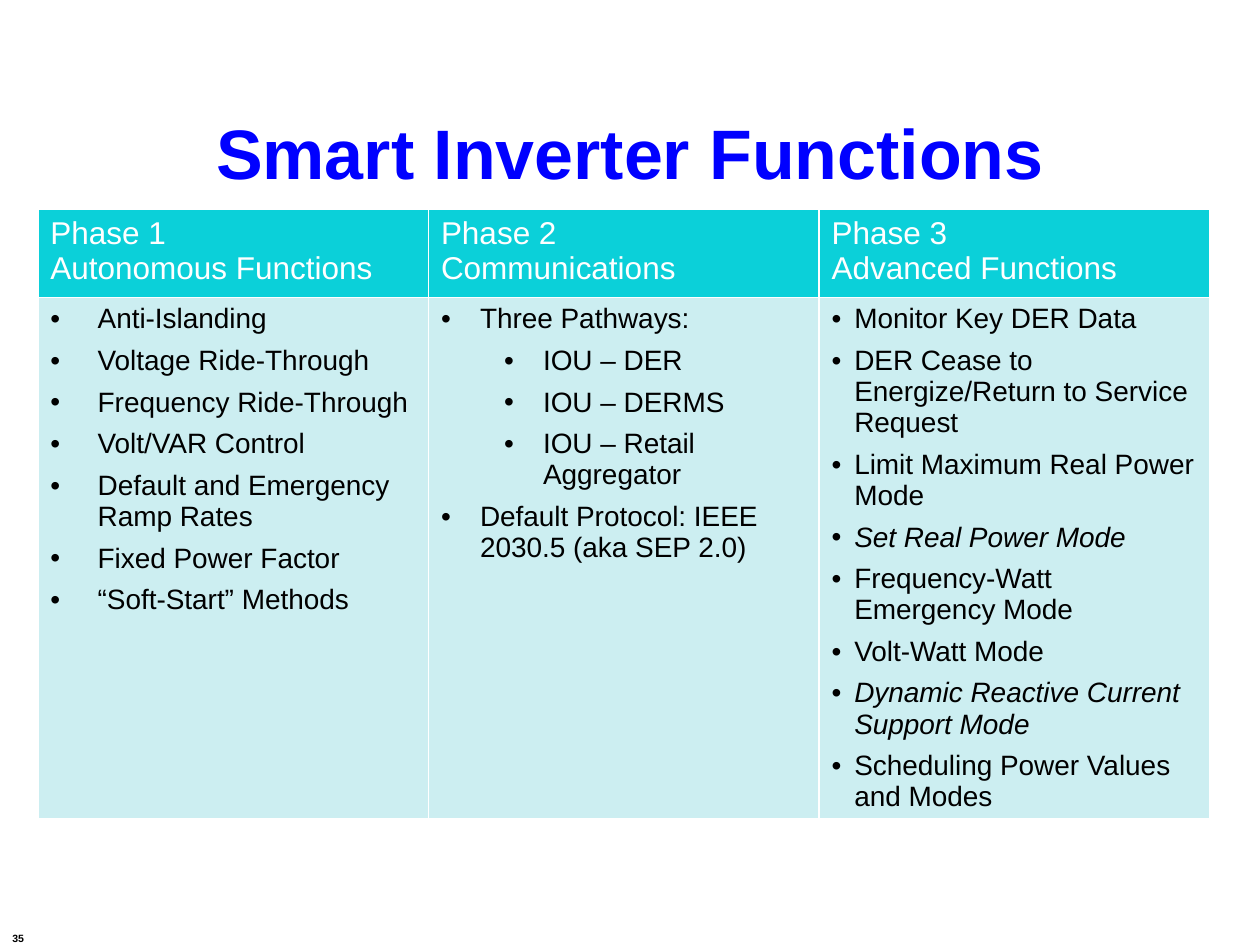
"""Build the slide that lists smart inverter functions by phase."""
from dataclasses import dataclass

from lxml.etree import SubElement
from pptx import Presentation
from pptx.dml.color import RGBColor as Color
from pptx.enum.text import MSO_ANCHOR as Anchor, PP_ALIGN as Align
from pptx.oxml.ns import qn
from pptx.util import Inches, Pt


@dataclass(frozen=True)
class Theme:
    font: str = "Arial"
    title: str = "0000FF"
    header: str = "0BD0D9"
    body: str = "CCEEF1"
    light: str = "FFFFFF"
    text: str = "000000"
    title_size: int = 40
    header_size: int = 18
    body_size: int = 16
    number_size: int = 6


@dataclass(frozen=True)
class Phase:
    name: str
    topic: str
    hanging: float
    functions: tuple


PHASES = (
    Phase("Phase 1", "Autonomous Functions", 0.375, (
        "Anti-Islanding", "Voltage Ride-Through", "Frequency Ride-Through",
        "Volt/VAR Control", "Default and Emergency Ramp Rates",
        "Fixed Power Factor", "“Soft-Start” Methods")),
    Phase("Phase 2", "Communications", 0.31, (
        "Three Pathways:",
        ("IOU – DER", "IOU – DERMS", "IOU – Retail Aggregator"),
        "Default Protocol: IEEE 2030.5 (aka SEP 2.0)")),
    Phase("Phase 3", "Advanced Functions", 0.18, (
        "Monitor Key DER Data",
        "DER Cease to Energize/Return to Service Request",
        "Limit Maximum Real Power Mode", "Set Real Power Mode",
        "Frequency-Watt Emergency Mode", "Volt-Watt Mode",
        "Dynamic Reactive Current Support Mode",
        "Scheduling Power Values and Modes")),
)
ITALIC = {"Set Real Power Mode", "Dynamic Reactive Current Support Mode"}
SUBLEVEL_INDENT = 0.5


class SlideBuilder:
    def __init__(self, presentation, theme):
        self.theme = theme
        self.width = presentation.slide_width
        self.height = presentation.slide_height
        self.slide = presentation.slides.add_slide(presentation.slide_layouts[5])

    def box(self, left, top, width, height):
        return (round(left * self.width), round(top * self.height),
                round(width * self.width), round(height * self.height))

    def style(self, paragraph, size, color, bold=False, italic=False):
        for run in paragraph.runs:
            font = run.font
            font.name, font.size = self.theme.font, Pt(size)
            font.bold, font.italic = bold, italic
            font.color.rgb = Color.from_string(color)

    def title(self, text, *shares):
        shape = self.slide.shapes.title
        shape.left, shape.top, shape.width, shape.height = self.box(*shares)
        frame = shape.text_frame
        frame.text = text
        frame.vertical_anchor = Anchor.MIDDLE
        frame.paragraphs[0].alignment = Align.CENTER
        self.style(frame.paragraphs[0], self.theme.title_size, self.theme.title, bold=True)

    def number(self, text, *shares):
        frame = self.slide.shapes.add_textbox(*self.box(*shares)).text_frame
        frame.word_wrap = True
        frame.margin_top = frame.margin_bottom = 0
        frame.vertical_anchor = Anchor.BOTTOM
        frame.text = text
        self.style(frame.paragraphs[0], self.theme.number_size, self.theme.text, bold=True)

    def bullet(self, paragraph, level, hanging):
        paragraph.level = level
        paragraph.space_after = Pt(6)
        properties = paragraph._p.get_or_add_pPr()
        properties.set("marL", str(Inches(hanging + level * SUBLEVEL_INDENT)))
        properties.set("indent", str(-Inches(hanging)))
        SubElement(properties, qn("a:buFont"), typeface=self.theme.font)
        SubElement(properties, qn("a:buChar"), char="•")

    def cell(self, cell, lines, fill):
        properties = cell._tc.get_or_add_tcPr()
        for side in ("a:lnL", "a:lnR"):
            line = SubElement(properties, qn(side), w=str(Pt(1)))
            paint = SubElement(line, qn("a:solidFill"))
            SubElement(paint, qn("a:srgbClr"), val=self.theme.light)
        cell.fill.solid()
        cell.fill.fore_color.rgb = Color.from_string(fill)
        cell.text_frame.text = "\n".join(lines)
        return cell.text_frame.paragraphs

    def functions(self, cell, phase):
        entries = []
        for item in phase.functions:
            nested = isinstance(item, tuple)
            entries += [(text, int(nested)) for text in (item if nested else (item,))]
        paragraphs = self.cell(cell, [text for text, _ in entries], self.theme.body)
        for paragraph, (text, level) in zip(paragraphs, entries):
            self.bullet(paragraph, level, phase.hanging)
            self.style(paragraph, self.theme.body_size, self.theme.text, italic=text in ITALIC)

    def phase_table(self, phases, header_share, *shares):
        frame = self.slide.shapes.add_table(2, len(phases), *self.box(*shares))
        table = frame.table
        table.horz_banding = False
        table.rows[0].height = round(header_share * self.height)
        table.rows[1].height = frame.height - table.rows[0].height
        for column, phase in enumerate(phases):
            header = self.cell(table.cell(0, column), (phase.name, phase.topic), self.theme.header)
            for paragraph in header:
                self.style(paragraph, self.theme.header_size, self.theme.light)
            self.functions(table.cell(1, column), phase)


def main():
    presentation = Presentation()
    presentation.slide_width, presentation.slide_height = Inches(10), Inches(7.5)
    builder = SlideBuilder(presentation, Theme())
    builder.title("Smart Inverter Functions", 0.05, 0.09, 0.9, 0.14)
    builder.phase_table(PHASES, 0.7 / 7.5, 0.03, 1.66 / 7.5, 0.93, 5.12 / 7.5)
    builder.number("35", 0, 7.27 / 7.5, 0.042, 0.03)
    presentation.save("out.pptx")


if __name__ == "__main__":
    main()
